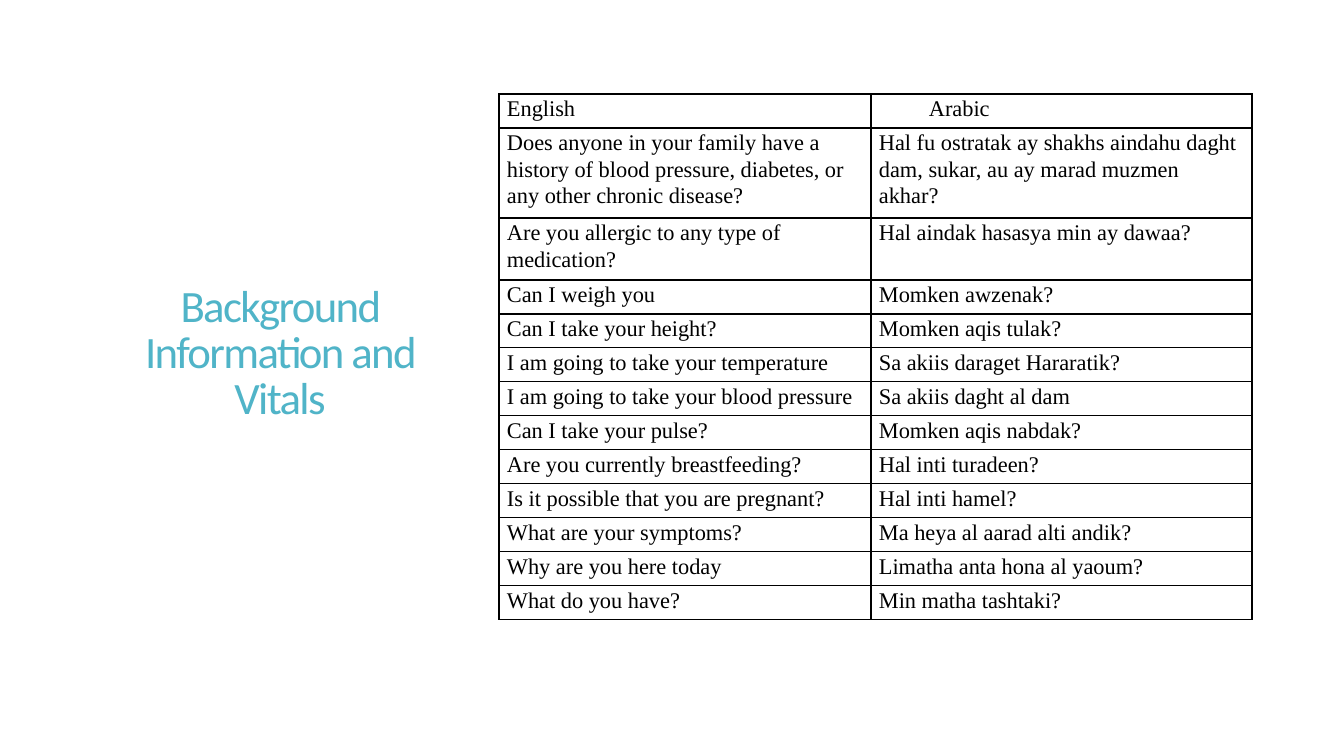
from lxml import etree
from pptx import Presentation
from pptx.dml.color import RGBColor
from pptx.enum.text import MSO_ANCHOR, MSO_AUTO_SIZE, PP_ALIGN
from pptx.oxml import parse_xml
from pptx.oxml.ns import nsdecls, qn
from pptx.util import Pt

SLIDE_W, SLIDE_H = 1344, 756
EMU_PER_PX = 12192000 / SLIDE_W

TEAL = RGBColor(0x50, 0xB4, 0xC8)
BLACK = RGBColor(0x00, 0x00, 0x00)

TITLE = "Background Information and Vitals"
PHRASES = [
    ("English", "Arabic"),
    ("Does anyone in your family have a history of blood pressure, diabetes, "
     "or any other chronic disease?",
     "Hal fu ostratak ay shakhs aindahu daght dam, sukar, au ay marad muzmen akhar?"),
    ("Are you allergic to any type of medication?", "Hal aindak hasasya min ay dawaa?"),
    ("Can I weigh you", "Momken awzenak?"),
    ("Can I take your height?", "Momken aqis tulak?"),
    ("I am going to take your temperature", "Sa akiis daraget Hararatik?"),
    ("I am going to take your blood pressure", "Sa akiis daght al dam"),
    ("Can I take your pulse?", "Momken aqis nabdak?"),
    ("Are you currently breastfeeding?", "Hal inti turadeen?"),
    ("Is it possible that you are pregnant?", "Hal inti hamel?"),
    ("What are your symptoms?", "Ma heya al aarad alti andik?"),
    ("Why are you here today", "Limatha anta hona al yaoum?"),
    ("What do you have?", "Min matha tashtaki?"),
]
COL_WIDTHS = (372, 381)
ROW_HEIGHT = 34
TALL_ROWS = {1: 90, 2: 62}  # rows whose text wraps


def px(n):
    return round(n * EMU_PER_PX)


def format_run(r, font, size, color):
    r.font.name = font
    r.font.size = Pt(size)
    r.font.color.rgb = color


def add_title(s, x, y, w, h):
    title = s.shapes.title
    title.left, title.top, title.width, title.height = map(px, (x, y, w, h))
    tf = title.text_frame
    tf.text = TITLE
    tf.word_wrap = True
    tf.auto_size = MSO_AUTO_SIZE.NONE
    tf.vertical_anchor = MSO_ANCHOR.MIDDLE
    p = tf.paragraphs[0]
    p.alignment = PP_ALIGN.CENTER
    p.line_spacing = 0.85
    r = p.runs[0]
    format_run(r, "Calibri", 32, TEAL)
    r.font._element.set("spc", "-120")  # tightened letter spacing


def add_borders(cell):
    tcPr = cell._tc.get_or_add_tcPr()
    for i, side in enumerate(("lnL", "lnR", "lnT", "lnB")):
        tcPr.insert(i, parse_xml(
            f'<a:{side} {nsdecls("a")} w="{Pt(1)}"><a:solidFill>'
            f'<a:srgbClr val="{BLACK}"/></a:solidFill></a:{side}>'))


def fill_cell(cell, text):
    cell.text = text
    cell.margin_left = cell.margin_right = px(8)
    cell.margin_top, cell.margin_bottom = px(1), 0
    cell.fill.background()
    add_borders(cell)
    p = cell.text_frame.paragraphs[0]
    p.line_spacing = 1.07
    format_run(p.runs[0], "Times New Roman", 16, BLACK)


def add_phrase_table(s, x, y):
    heights = [TALL_ROWS.get(i, ROW_HEIGHT) for i in range(len(PHRASES))]
    table = s.shapes.add_table(len(PHRASES), len(COL_WIDTHS), px(x), px(y),
                               px(sum(COL_WIDTHS)), px(sum(heights))).table
    table.first_row = table.horz_banding = False
    for col, width in zip(table.columns, COL_WIDTHS):
        col.width = px(width)
    for row, height, phrases in zip(table.rows, heights, PHRASES):
        row.height = px(height)
        for cell, text in zip(row.cells, phrases):
            fill_cell(cell, text)
    # The Arabic heading has a first-line indent
    heading = table.cell(0, 1).text_frame.paragraphs[0]
    heading._p.get_or_add_pPr().set("indent", str(px(50)))


def main():
    prs = Presentation()
    prs.slide_width, prs.slide_height = px(SLIDE_W), px(SLIDE_H)
    s = prs.slides.add_slide(prs.slide_layouts[5])
    add_title(s, 115, 55, 330, 600)
    add_phrase_table(s, 499, 94)
    prs.save("out.pptx")


if __name__ == "__main__":
    main()
